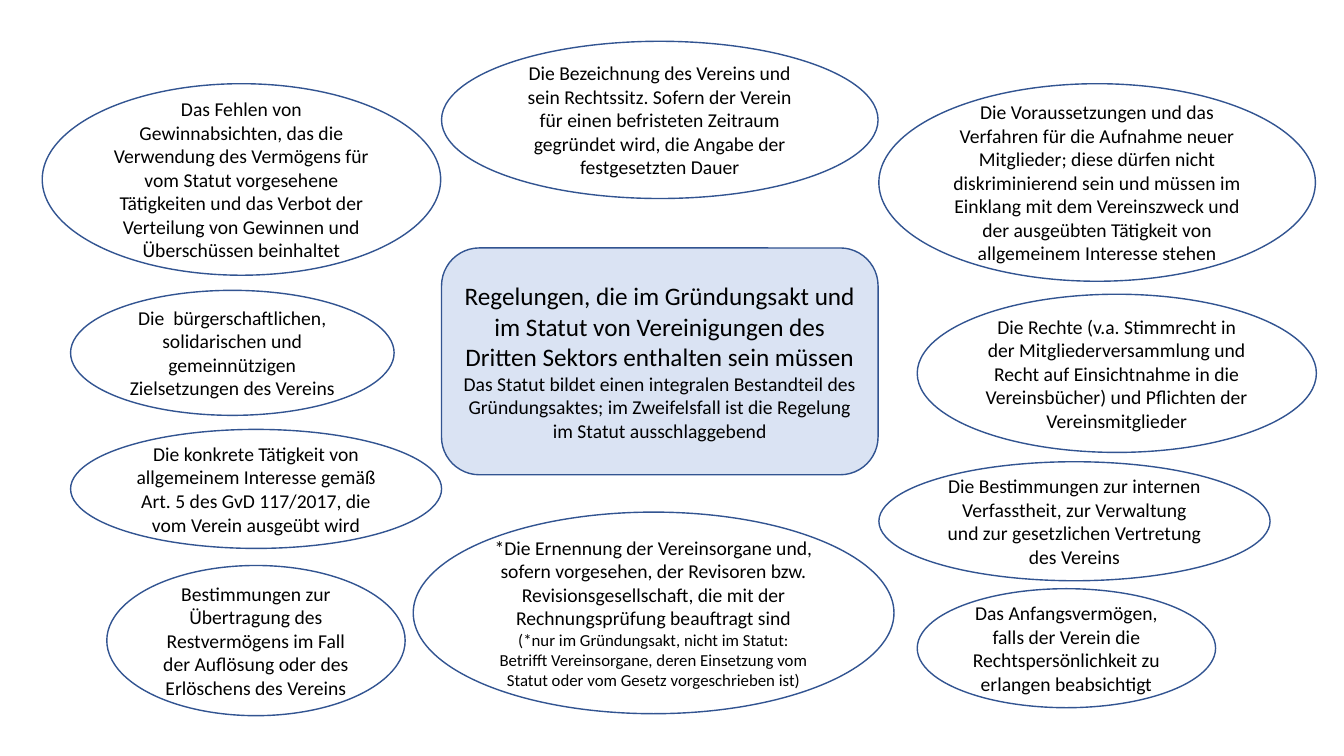
from dataclasses import dataclass

from pptx import Presentation
from pptx.dml.color import RGBColor
from pptx.enum.shapes import MSO_SHAPE
from pptx.enum.text import MSO_ANCHOR, PP_ALIGN
from pptx.util import Pt


@dataclass(frozen=True)
class Theme:
    """Colours, type sizes and font of the slide."""
    font: str = "Calibri"
    text: RGBColor = RGBColor.from_string("000000")
    line: RGBColor = RGBColor.from_string("325491")
    panel: RGBColor = RGBColor.from_string("DAE3F3")
    line_width: int = 1
    heading: int = 18
    body: int = 14
    note: int = 12


THEME = Theme()
LEFT, CENTRE, RIGHT, RIGHT_INNER = 50.4, 315.4, 627.8, 655.2
WIDE = 311.8

RULES = [
    ((RIGHT, 59.8, WIDE, 141.1),
     ["Die Voraussetzungen und das Verfahren für die Aufnahme neuer Mitglieder; "
      "diese dürfen nicht diskriminierend sein und müssen im Einklang mit dem "
      "Vereinszweck und der ausgeübten Tätigkeit von allgemeinem Interesse stehen"]),
    ((LEFT, 306.7, 265, 85),
     ["Die konkrete Tätigkeit von allgemeinem Interesse gemäß Art. 5 des "
      "GvD 117/2017, die vom Verein ausgeübt wird"]),
    ((30.2, 59.8, 284.6, 136.8),
     ["Das Fehlen von Gewinnabsichten, das die Verwendung des Vermögens für vom "
      "Statut vorgesehene Tätigkeiten und das Verbot der Verteilung von Gewinnen "
      "und Überschüssen beinhaltet"]),
    ((LEFT, 207.4, 231.1, 89.3),
     ["Die  bürgerschaftlichen, solidarischen und gemeinnützigen Zielsetzungen "
      "des Vereins"]),
    ((CENTRE, 29.5, WIDE, 112.3),
     ["Die Bezeichnung des Vereins und sein Rechtssitz. Sofern der Verein für "
      "einen befristeten Zeitraum gegründet wird, die Angabe der festgesetzten "
      "Dauer"]),
    ((295.2, 365.8, 343.4, 144),
     ["*Die Ernennung der Vereinsorgane und, sofern vorgesehen, der Revisoren "
      "bzw. Revisionsgesellschaft, die mit der Rechnungsprüfung beauftragt sind",
      "(*nur im Gründungsakt, nicht im Statut: Betrifft Vereinsorgane, deren "
      "Einsetzung vom Statut oder vom Gesetz vorgeschrieben ist)"]),
    ((76.3, 403.9, 213.1, 107.3),
     ["Bestimmungen zur Übertragung des Restvermögens im Fall der Auflösung oder "
      "des Erlöschens des Vereins"]),
    ((RIGHT_INNER, 420.5, 213.1, 85),
     ["Das Anfangsvermögen, falls der Verein die Rechtspersönlichkeit zu erlangen "
      "beabsichtigt"]),
    ((RIGHT, 329.8, 279.4, 85),
     ["Die Bestimmungen zur internen Verfasstheit, zur Verwaltung und zur "
      "gesetzlichen Vertretung des Vereins"]),
    ((RIGHT_INNER, 210.2, 285.1, 113),
     ["Die Rechte (v.a. Stimmrecht in der Mitgliederversammlung und Recht auf "
      "Einsichtnahme in die Vereinsbücher) und Pflichten der Vereinsmitglieder"]),
]

TOPIC_BOX = (CENTRE, 177.1, WIDE, 162)
TOPIC = [
    "Regelungen, die im Gründungsakt und im Statut von Vereinigungen des Dritten "
    "Sektors enthalten sein müssen",
    "Das Statut bildet einen integralen Bestandteil des Gründungsaktes; im "
    "Zweifelsfall ist die Regelung im Statut ausschlaggebend",
]


def set_attrs(obj, values):
    """Set each attribute named in the dict."""
    for name, value in values.items():
        setattr(obj, name, value)


def write_text(sp, texts, sizes):
    """Write centred paragraphs, each in its own size."""
    tf = sp.text_frame
    set_attrs(tf, {"word_wrap": True, "vertical_anchor": MSO_ANCHOR.MIDDLE})
    for i, (text, size) in enumerate(zip(texts, sizes)):
        p = tf.paragraphs[0] if i == 0 else tf.add_paragraph()
        p.alignment = PP_ALIGN.CENTER
        r = p.add_run()
        r.text = text
        set_attrs(r.font, {"name": THEME.font, "size": Pt(size)})
        r.font.color.rgb = THEME.text


def add_bubble(s, kind, box, texts, sizes, fill=None):
    """Add an outlined shape with text and an optional fill."""
    sp = s.shapes.add_shape(kind, *map(Pt, box))
    sp.shadow.inherit = False
    if fill is None:
        sp.fill.background()
    else:
        sp.fill.solid()
        sp.fill.fore_color.rgb = fill
    sp.line.color.rgb = THEME.line
    sp.line.width = Pt(THEME.line_width)
    write_text(sp, texts, sizes)


def main():
    """Build the slide and save it."""
    prs = Presentation()
    set_attrs(prs, {"slide_width": Pt(960), "slide_height": Pt(540)})
    s = prs.slides.add_slide(prs.slide_layouts[6])
    for box, texts in RULES:
        add_bubble(s, MSO_SHAPE.OVAL, box, texts, (THEME.body, THEME.note))
    add_bubble(s, MSO_SHAPE.ROUNDED_RECTANGLE, TOPIC_BOX, TOPIC,
               (THEME.heading, THEME.body), THEME.panel)
    prs.save("out.pptx")


if __name__ == "__main__":
    main()
